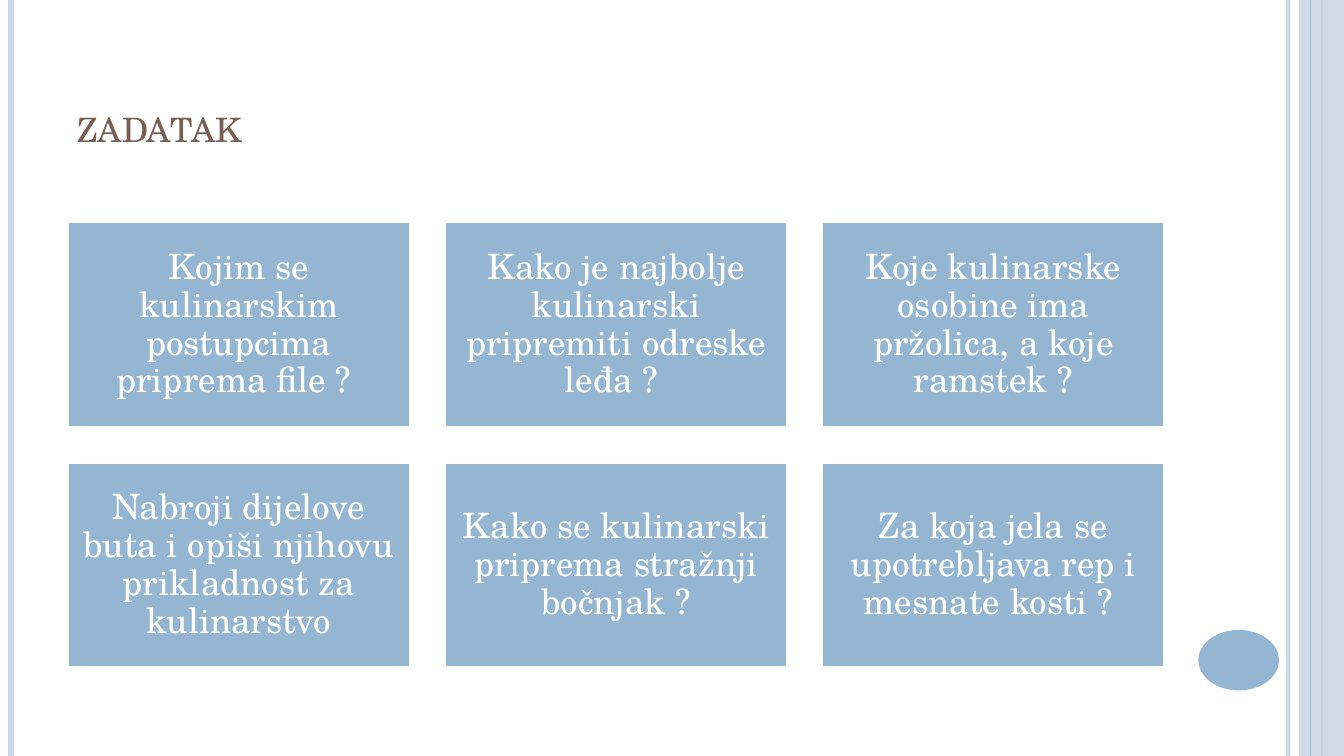
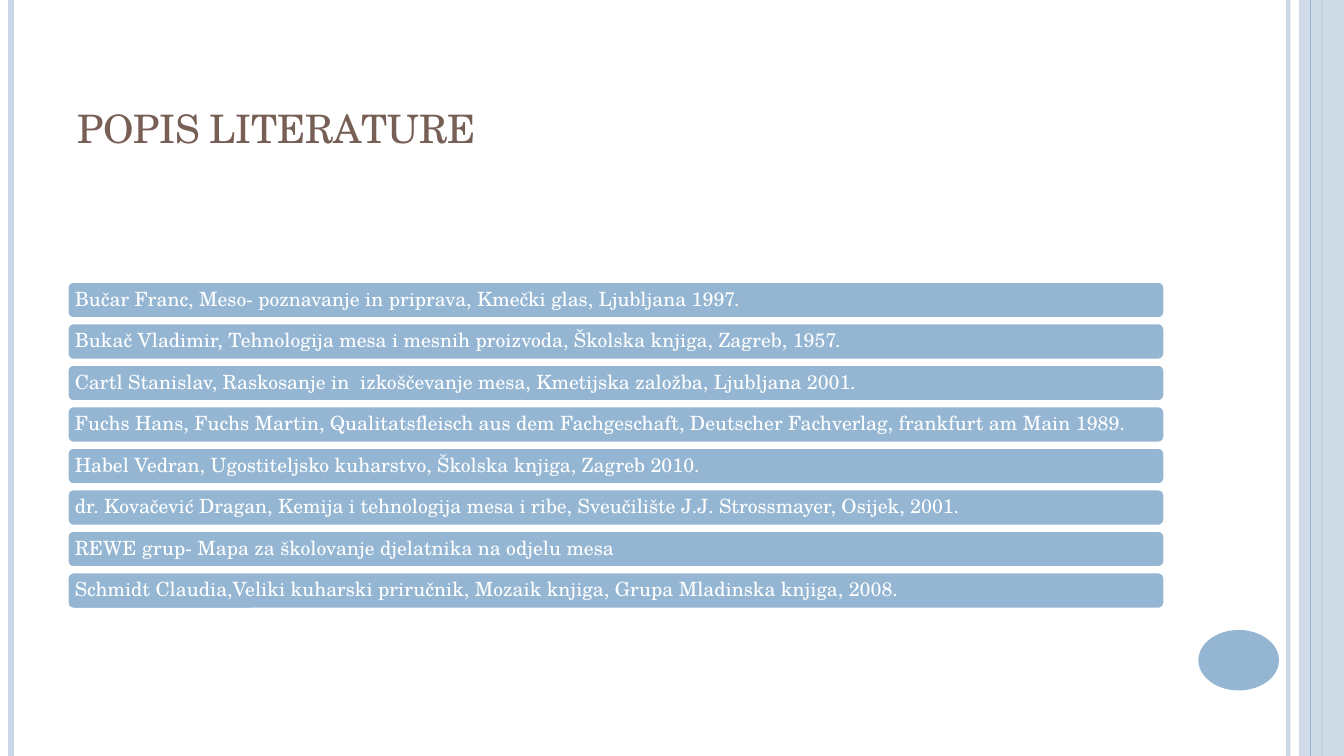
from lxml.etree import SubElement
from pptx import Presentation
from pptx.dml.color import RGBColor
from pptx.enum.shapes import MSO_CONNECTOR, MSO_SHAPE
from pptx.enum.text import MSO_ANCHOR, MSO_AUTO_SIZE, PP_ALIGN
from pptx.oxml.ns import qn
from pptx.util import Pt

# Content
QUESTIONS_TITLE = "zadatak"
# A closing space shifts the centred last line slightly to the left
QUESTIONS = [
    "Kojim se kulinarskim postupcima priprema file ? ",
    "Kako je najbolje kulinarski pripremiti odreske leđa ? ",
    "Koje kulinarske osobine ima pržolica, a koje ramstek ?",
    "Nabroji dijelove buta i opiši njihovu prikladnost za kulinarstvo",
    "Kako se kulinarski priprema stražnji bočnjak ?",
    "Za koja jela se upotrebljava rep i mesnate kosti ? ",
]
SOURCES_TITLE = "POPIS LITERATURE"
SOURCES = [
    "Bučar Franc, Meso- poznavanje in priprava, Kmečki glas, Ljubljana 1997.",
    "Bukač Vladimir, Tehnologija mesa i mesnih proizvoda, Školska knjiga, Zagreb, 1957.",
    "Cartl Stanislav, Raskosanje in  izkoščevanje mesa, Kmetijska založba, Ljubljana 2001.",
    "Fuchs Hans, Fuchs Martin, Qualitatsfleisch aus dem Fachgeschaft, "
    "Deutscher Fachverlag, frankfurt am Main 1989.",
    "Habel Vedran, Ugostiteljsko kuharstvo, Školska knjiga, Zagreb 2010.",
    "dr. Kovačević Dragan, Kemija i tehnologija mesa i ribe, "
    "Sveučilište J.J. Strossmayer, Osijek, 2001.",
    "REWE grup- Mapa za školovanje djelatnika na odjelu mesa",
    "Schmidt Claudia,Veliki kuharski priručnik, Mozaik knjiga, Grupa Mladinska knjiga, 2008.",
]


# Theme and page measures, in points
class Theme:
    font = "TeX Gyre Schola"
    blue = RGBColor.from_string("94B6D2")
    pale = RGBColor.from_string("C8D7E5")
    brown = RGBColor.from_string("775F55")
    white = RGBColor.from_string("FFFFFF")
    questions_title, sources_title = 30, 28
    question, source = 25, 14
    outline = 2


SLIDE_WIDTH, SLIDE_HEIGHT = 960, 540
LEFT, CONTENT_WIDTH = 48, 784
TITLE_BOX = (LEFT, 21.6, CONTENT_WIDTH, 90)
CARD_COLUMNS, CARD_GAP, CARD_TOP, CARD_HEIGHT = 3, 24.5, 158.6, 147
BAR_TOP, BAR_HEIGHT, BAR_GAP = 201, 26.6, 3.05

# Side lines: x, colour, width, opacity in percent
LINES_BEHIND = [
    (920.2, Theme.pale, 3, 93),
    (8, Theme.pale, 4.5, 100),
    (944, Theme.blue, 1.5, 100),
]
LINES_IN_FRONT = [(936, Theme.blue, 0.75, 100)]
SIDE_PANEL = (928, 0, 32, SLIDE_HEIGHT)
PAGE_OVAL = (856, 450, 57.6, 43.2)


def set_opacity(element, percent):
    for colour in element.iter(qn("a:srgbClr")):
        SubElement(colour, qn("a:alpha"), val=str(percent * 1000))


def format_object(target, formats):
    for name, value in formats.items():
        setattr(target, name, value)


def format_font(font, size, colour):
    format_object(font, {"name": Theme.font, "size": Pt(size), "bold": False})
    font.color.rgb = colour


def add_filled(slide, kind, box, colour, outline=None):
    shape = slide.shapes.add_shape(kind, *map(Pt, box))
    shape.shadow.inherit = False
    shape.fill.solid()
    shape.fill.fore_color.rgb = colour
    if outline is None:
        shape.line.fill.background()
    else:
        shape.line.color.rgb = outline
        shape.line.width = Pt(Theme.outline)
    return shape


def add_side_line(slide, x, colour, width, opacity):
    line = slide.shapes.add_connector(
        MSO_CONNECTOR.STRAIGHT, Pt(x), Pt(0), Pt(x), Pt(SLIDE_HEIGHT))
    line.line.color.rgb = colour
    line.line.width = Pt(width)
    if opacity < 100:
        set_opacity(line.element, opacity)
    SubElement(line.element.spPr, qn("a:effectLst"))
    return line


def decorate_layout(layout, slide):
    """Draw the shared parts on a slide, then move them behind the layout's title."""
    for placeholder in list(layout.placeholders):
        if placeholder.placeholder_format.idx != 0:
            placeholder.element.getparent().remove(placeholder.element)
    parts = [add_side_line(slide, *line) for line in LINES_BEHIND]
    panel = add_filled(slide, MSO_SHAPE.RECTANGLE, SIDE_PANEL, Theme.pale)
    set_opacity(panel.element, 87)
    parts.append(panel)
    parts += [add_side_line(slide, *line) for line in LINES_IN_FRONT]
    parts.append(add_filled(slide, MSO_SHAPE.OVAL, PAGE_OVAL, Theme.blue))
    for position, part in enumerate(parts, start=2):
        layout.shapes.element.insert(position, part.element)


def set_title(slide, text, size):
    title = slide.shapes.title
    format_object(title, dict(zip(("left", "top", "width", "height"), map(Pt, TITLE_BOX))))
    frame = title.text_frame
    format_object(frame, {"text": text, "word_wrap": True,
                          "auto_size": MSO_AUTO_SIZE.NONE,
                          "vertical_anchor": MSO_ANCHOR.BOTTOM})
    paragraph = frame.paragraphs[0]
    paragraph.alignment = PP_ALIGN.LEFT
    run = paragraph.runs[0]
    format_font(run.font, size, Theme.brown)
    run.font._element.set("cap", "small")


def add_text_box(slide, kind, box, text, size, alignment, inset):
    shape = add_filled(slide, kind, box, Theme.blue, Theme.white)
    frame = shape.text_frame
    margins = {f"margin_{side}": Pt(inset) for side in ("left", "top", "right", "bottom")}
    format_object(frame, {"text": text, "word_wrap": True,
                          "vertical_anchor": MSO_ANCHOR.MIDDLE, **margins})
    paragraph = frame.paragraphs[0]
    format_object(paragraph, {"alignment": alignment, "line_spacing": 0.9})
    format_font(paragraph.runs[0].font, size, Theme.white)


def fill_questions(slide):
    set_title(slide, QUESTIONS_TITLE, Theme.questions_title)
    width = (CONTENT_WIDTH - (CARD_COLUMNS - 1) * CARD_GAP) / CARD_COLUMNS
    for index, question in enumerate(QUESTIONS):
        row, column = divmod(index, CARD_COLUMNS)
        box = (LEFT + column * (width + CARD_GAP),
               CARD_TOP + row * (CARD_HEIGHT + CARD_GAP), width, CARD_HEIGHT)
        add_text_box(slide, MSO_SHAPE.RECTANGLE, box, question,
                     Theme.question, PP_ALIGN.CENTER, 7.5)


def fill_sources(slide):
    set_title(slide, SOURCES_TITLE, Theme.sources_title)
    for index, source in enumerate(SOURCES):
        box = (LEFT, BAR_TOP + index * (BAR_HEIGHT + BAR_GAP), CONTENT_WIDTH, BAR_HEIGHT)
        add_text_box(slide, MSO_SHAPE.ROUNDED_RECTANGLE, box, source,
                     Theme.source, PP_ALIGN.LEFT, 4.2)


def main():
    presentation = Presentation()
    presentation.slide_width = Pt(SLIDE_WIDTH)
    presentation.slide_height = Pt(SLIDE_HEIGHT)
    layout = presentation.slide_layouts.get_by_name("Title Only")
    slides = [presentation.slides.add_slide(layout) for _ in range(2)]
    decorate_layout(layout, slides[0])
    for slide, fill in zip(slides, (fill_questions, fill_sources)):
        fill(slide)
    presentation.save("out.pptx")


if __name__ == "__main__":
    main()
